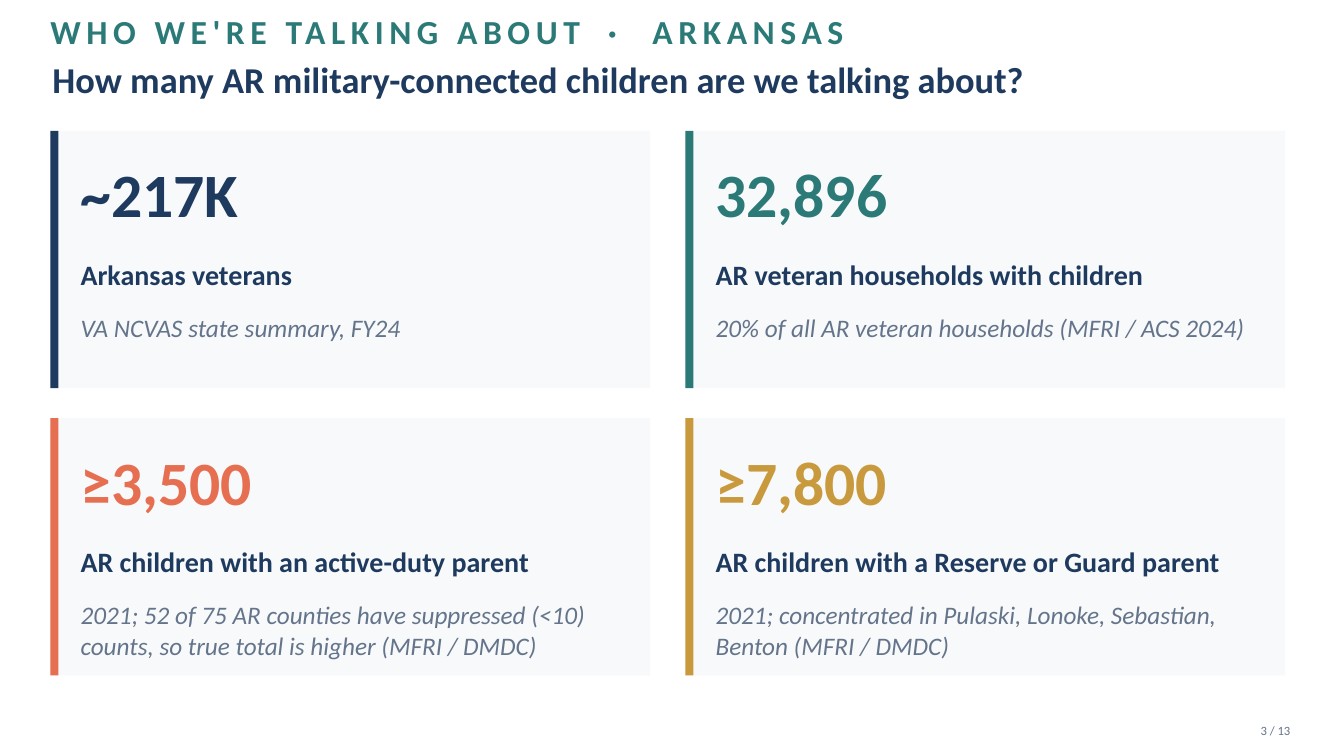
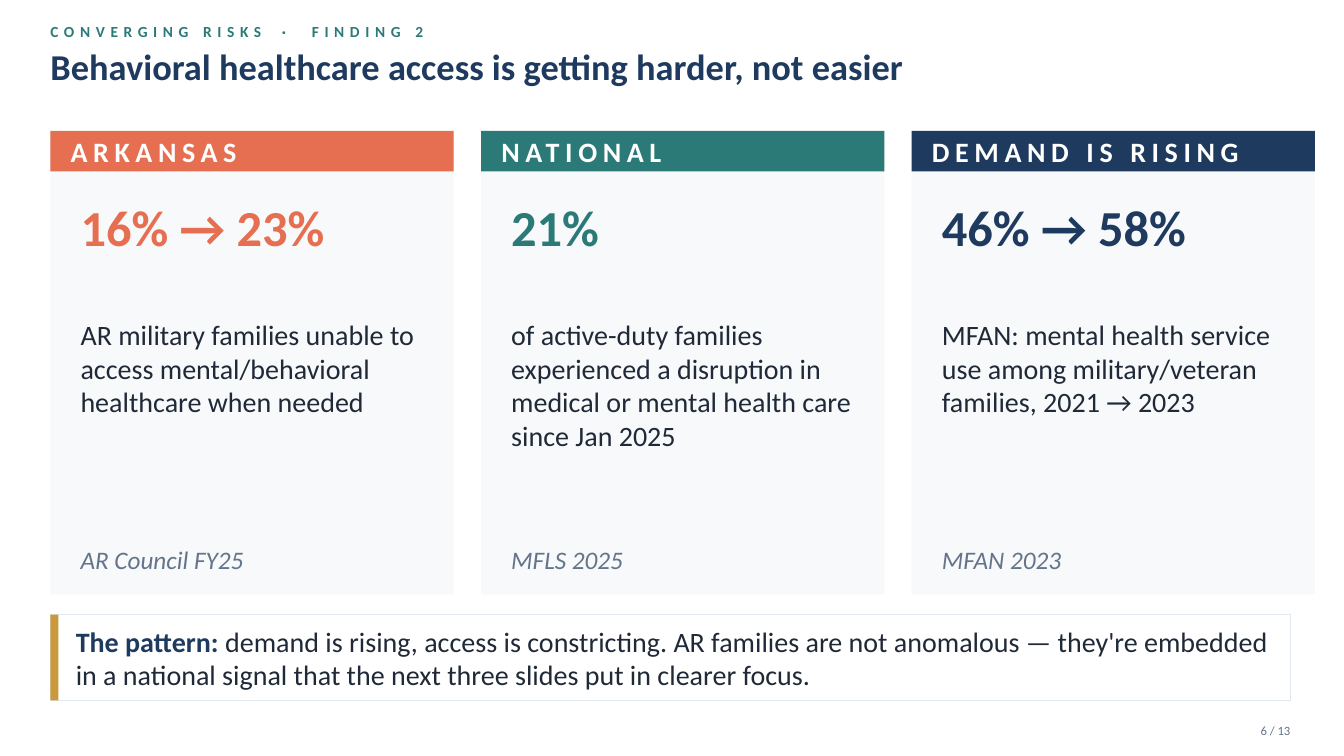
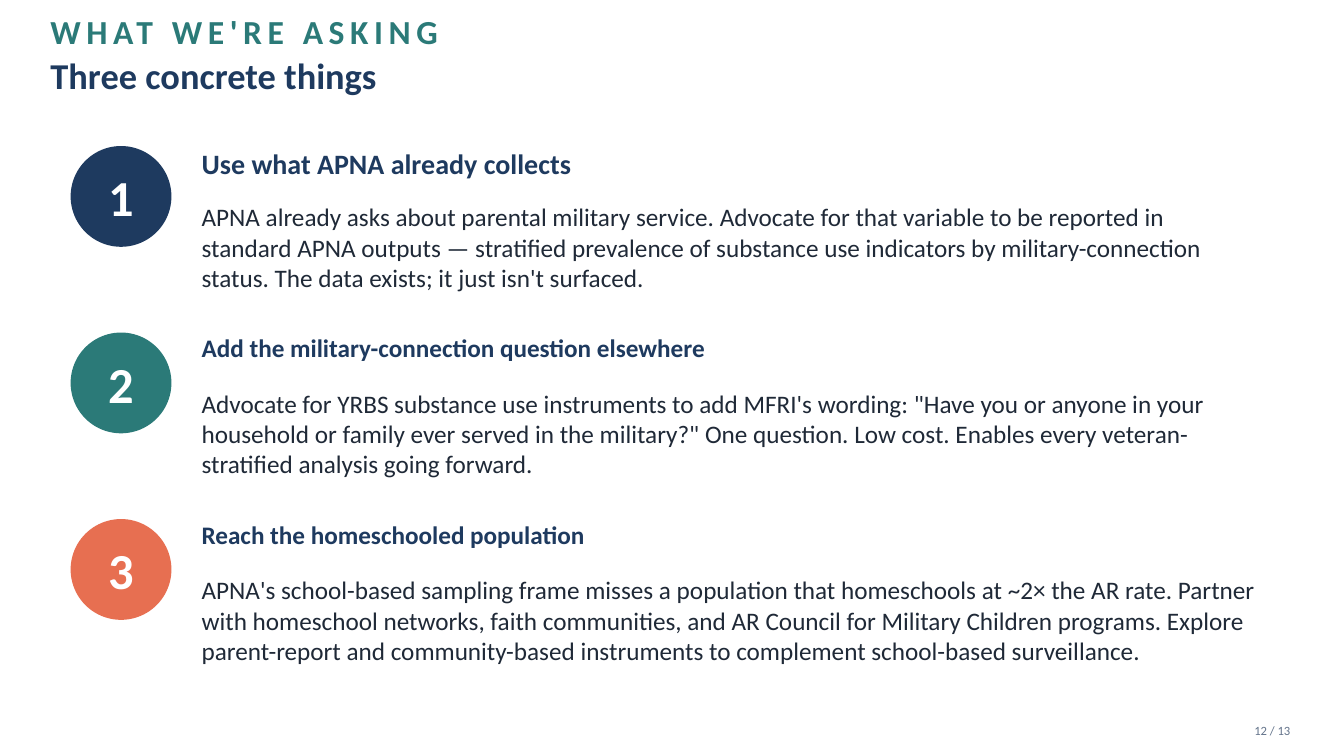
"""Build three slides about military-connected children in Arkansas."""
from pptx import Presentation
from pptx import util as u
from pptx.dml.color import RGBColor
from pptx.enum import shapes, text

COLORS = {
    "navy": "1E3A5F", "teal": "2B7A78", "coral": "E76F51", "gold": "C99A3D",
    "ink": "1F2937", "slate": "64748B", "panel": "F8F9FA", "border": "E2E8F0",
    "white": "FFFFFF",
}
FONT = "Calibri"
LEFT = 1.27
TOP = 3.3
BAR = 0.2
TRACKING = 4
TOP_ANCHOR, MIDDLE = text.MSO_ANCHOR.TOP, text.MSO_ANCHOR.MIDDLE
RECTANGLE, OVAL = shapes.MSO_SHAPE.RECTANGLE, shapes.MSO_SHAPE.OVAL


def write(page, place, runs, anchor=TOP_ANCHOR, align=text.PP_ALIGN.LEFT, box=None):
    """Write runs of (text, size, color, style, tracking) into a box placed in cm."""
    left, top, width, height = [u.Cm(value) for value in place]
    if box is None:
        box = page.shapes.add_textbox(left, top, width, height)
    box.left, box.top, box.width, box.height = left, top, width, height
    frame = box.text_frame
    frame.auto_size = text.MSO_AUTO_SIZE.NONE
    frame.word_wrap = True
    frame.vertical_anchor = anchor
    frame.margin_left = frame.margin_top = frame.margin_right = frame.margin_bottom = 0
    para = frame.paragraphs[0]
    para.alignment = align
    for words, size, color, style, tracking in runs:
        span = para.add_run()
        span.text = words
        span.font.name = FONT
        span.font.size = u.Pt(size)
        span.font.bold = style == "bold"
        span.font.italic = style == "italic"
        span.font.color.rgb = RGBColor.from_string(COLORS[color])
        if tracking:
            span.font._element.set("spc", str(tracking * 100))


def add_block(page, place, color, kind=RECTANGLE, border=None):
    """Add a filled shape placed in cm."""
    block = page.shapes.add_shape(kind, *[u.Cm(value) for value in place])
    block.shadow.inherit = False
    block.fill.solid()
    block.fill.fore_color.rgb = RGBColor.from_string(COLORS[color])
    if border:
        block.line.color.rgb = RGBColor.from_string(COLORS[border])
        block.line.width = u.Pt(1)
    else:
        block.line.fill.background()
    return block


deck = Presentation()
deck.slide_width, deck.slide_height = u.Cm(33.86), u.Cm(19.05)

headings = [
    (["WHO WE'RE TALKING ABOUT", "ARKANSAS"], 24, 10,
     "How many AR military-connected children are we talking about?", 1.32, 1.22, "3 / 13"),
    (["CONVERGING RISKS", "FINDING 2"], 11, 8,
     "Behavioral healthcare access is getting harder, not easier", LEFT, 0.89, "6 / 13"),
    (["WHAT WE'RE ASKING"], 24, 10,
     "Three concrete things", LEFT, 1.14, "12 / 13"),
]
pages = []
for labels, size, dot_tracking, title, title_left, title_top, number in headings:
    page = deck.slides.add_slide(deck.slide_layouts[5])
    pages.append(page)
    eyebrow = [(labels[0], size, "teal", "bold", TRACKING)]
    for label in labels[1:]:
        eyebrow.append((" · ", size, "teal", "bold", dot_tracking))
        eyebrow.append((label, size, "teal", "bold", TRACKING))
    write(page, (LEFT, 0.46, 30.48, 0.64), eyebrow, MIDDLE)
    write(page, (title_left, title_top, 31.24, 1.52), [(title, 26, "navy", "bold", 0)],
          MIDDLE, box=page.shapes.title)
    write(page, (29.21, 18.03, 3.3, 0.76), [(number, 9, "slate", None, 0)],
          MIDDLE, text.PP_ALIGN.RIGHT)
stats_page, access_page, asks_page = pages

stats = [
    ("~217K", "navy", "Arkansas veterans", "VA NCVAS state summary, FY24"),
    ("32,896", "teal", "AR veteran households with children",
     "20% of all AR veteran households (MFRI / ACS 2024)"),
    ("≥3,500", "coral", "AR children with an active-duty parent",
     "2021; 52 of 75 AR counties have suppressed (<10) counts, "
     "so true total is higher (MFRI / DMDC)"),
    ("≥7,800", "gold", "AR children with a Reserve or Guard parent",
     "2021; concentrated in Pulaski, Lonoke, Sebastian, Benton (MFRI / DMDC)"),
]
for index, (figure, color, label, source) in enumerate(stats):
    row, column = divmod(index, 2)
    left, top = LEFT + column * 16, TOP + row * 7.24
    add_block(stats_page, (left, top, 15.11, 6.48), "panel")
    add_block(stats_page, (left, top, BAR, 6.48), color)
    for offset, height, run in [
        (0.64, 2.41, (figure, 44, color, "bold", 0)),
        (3.18, 1.4, (label, 20, "navy", "bold", 0)),
        (4.57, 1.78, (source, 18, "slate", "italic", 0)),
    ]:
        write(stats_page, (left + 0.76, top + offset, 13.97, height), [run])

findings = [
    ("ARKANSAS", "coral", "16% → 23%",
     "AR military families unable to access mental/behavioral healthcare when needed",
     "AR Council FY25"),
    ("NATIONAL", "teal", "21%",
     "of active-duty families experienced a disruption in medical or mental health care "
     "since Jan 2025",
     "MFLS 2025"),
    ("DEMAND IS RISING", "navy", "46% → 58%",
     "MFAN: mental health service use among military/veteran families, 2021 → 2023",
     "MFAN 2023"),
]
for column, (header, color, figure, detail, source) in enumerate(findings):
    left = LEFT + column * 10.85
    add_block(access_page, (left, TOP, 10.16, 11.68), "panel")
    add_block(access_page, (left, TOP, 10.16, 1.02), color)
    write(access_page, (left + 0.51, TOP, 9.14, 1.02),
          [(header, 20, "white", "bold", TRACKING)], MIDDLE)
    for offset, height, run in [
        (1.65, 2.79, (figure, 36, color, "bold", 0)),
        (4.7, 4.57, (detail, 20, "ink", None, 0)),
        (10.41, 0.89, (source, 18, "slate", "italic", 0)),
    ]:
        write(access_page, (left + 0.76, TOP + offset, 8.64, height), [run])

add_block(access_page, (LEFT, 15.49, 31.24, 2.16), "white", border="border")
add_block(access_page, (LEFT, 15.49, BAR, 2.16), "gold")
write(access_page, (1.91, 15.62, 30.48, 1.91), [
    ("The pattern: ", 20, "navy", "bold", 0),
    ("demand is rising, access is constricting. AR families are not anomalous — they're "
     "embedded in a national signal that the next three slides put in clearer focus.",
     20, "ink", None, 0),
], MIDDLE)

asks = [
    ("navy", 20, "Use what APNA already collects",
     "APNA already asks about parental military service. Advocate for that variable to be "
     "reported in standard APNA outputs — stratified prevalence of substance use indicators "
     "by military-connection status. The data exists; it just isn't surfaced."),
    ("teal", 18, "Add the military-connection question elsewhere",
     "Advocate for YRBS substance use instruments to add MFRI's wording: \"Have you or anyone "
     "in your household or family ever served in the military?\" One question. Low cost. "
     "Enables every veteran-stratified analysis going forward."),
    ("coral", 18, "Reach the homeschooled population",
     "APNA's school-based sampling frame misses a population that homeschools at ~2× the AR "
     "rate. Partner with homeschool networks, faith communities, and AR Council for Military "
     "Children programs. Explore parent-report and community-based instruments to complement "
     "school-based surveillance."),
]
for index, (color, size, heading, detail) in enumerate(asks):
    top = 3.68 + index * 4.7
    badge_place = (1.78, top, 2.54, 2.54)
    badge = add_block(asks_page, badge_place, color, OVAL)
    write(asks_page, badge_place, [(str(index + 1), 36, "white", "bold", 0)],
          MIDDLE, text.PP_ALIGN.CENTER, badge)
    write(asks_page, (5.08, top, 26.67, 1.4), [(heading, size, "navy", "bold", 0)])
    write(asks_page, (5.08, top + 1.4, 26.67, 2.54), [(detail, 18, "ink", None, 0)])

deck.save("out.pptx")
